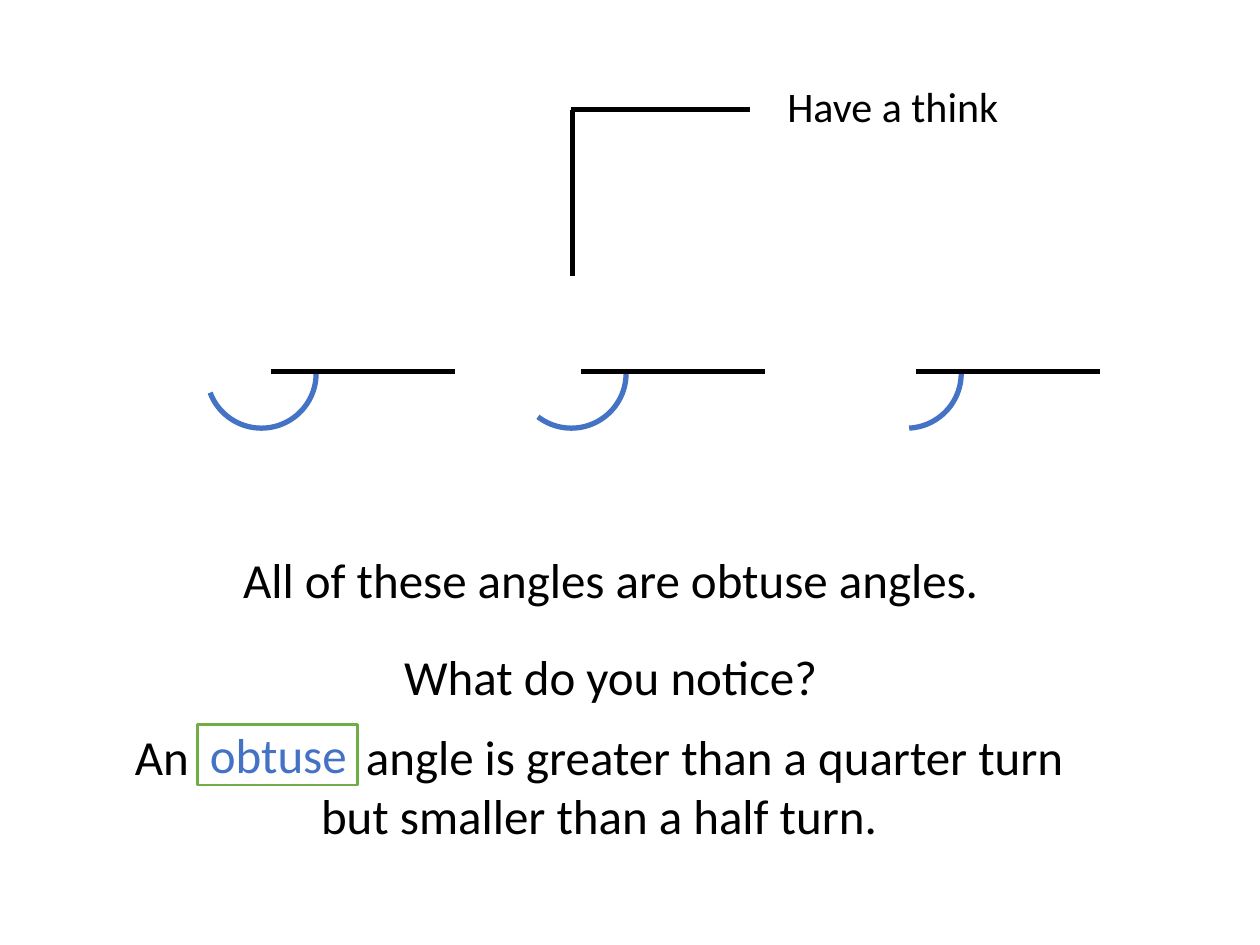
from pptx import Presentation
from pptx.dml.color import RGBColor
from pptx.enum.shapes import MSO_CONNECTOR, MSO_SHAPE
from pptx.enum.text import MSO_AUTO_SIZE, PP_ALIGN
from pptx.oxml.ns import qn
from pptx.util import Pt

COLOURS = {"black": "000000", "blue": "4472C4", "green": "70AD47"}


def add_text(slide, box, runs, size=28, colour="black", alignment=PP_ALIGN.CENTER):
    """Add one wrapped paragraph made of the given runs and return them."""
    shape = slide.shapes.add_textbox(*map(Pt, box))
    text_frame = shape.text_frame
    text_frame.word_wrap = True
    text_frame.auto_size = MSO_AUTO_SIZE.SHAPE_TO_FIT_TEXT
    paragraph = text_frame.paragraphs[0]
    paragraph.alignment = alignment
    for text in runs:
        run = paragraph.add_run()
        run.text = text
        run.font.size = Pt(size)
        run.font.name = "Calibri"
        run.font.color.rgb = RGBColor.from_string(COLOURS[colour])
    return paragraph.runs


def style_line(shape, colour, width):
    """Set the colour and width of an outline."""
    shape.line.color.rgb = RGBColor.from_string(COLOURS[colour])
    shape.line.width = Pt(width)


def add_outline(slide, kind, box, colour, width):
    """Add an unfilled preset shape without a shadow."""
    shape = slide.shapes.add_shape(kind, *map(Pt, box))
    shape.shadow.inherit = False
    shape.fill.background()
    style_line(shape, colour, width)
    return shape


def add_arm(slide, start, end):
    """Add a thick black line for one arm of an angle."""
    arm = slide.shapes.add_connector(MSO_CONNECTOR.STRAIGHT, *map(Pt, start + end))
    style_line(arm, "black", 3)
    properties = arm._element.spPr
    properties.append(properties.makeelement(qn("a:effectLst"), {}))


def add_right_angle(slide, left, top, width, height):
    """Draw the two arms of the quarter turn."""
    add_arm(slide, (left + width, top), (left, top))
    add_arm(slide, (left + 0.8, top + height), (left + 0.8, top))


def add_obtuse_angle(slide, left, top, arc_offset, degrees):
    """Draw a horizontal arm and an arc that turns clockwise from it."""
    size = 62.6
    arc_box = (left + arc_offset, top - 30.3, size, size)
    arc = add_outline(slide, MSO_SHAPE.ARC, arc_box, "blue", 3)
    arc.adjustments[0] = 0
    arc.adjustments[1] = degrees * 0.6
    add_arm(slide, (left, top), (left + 105, top))


def add_conclusion(slide, left, top, width, height):
    """Write the closing sentence with the boxed key word in its gap."""
    sentence = ["An", " ", "angle is greater than a quarter turn but smaller than a half turn."]
    gap = add_text(slide, (left, top, width, height), sentence)[1]
    gap.font._element.set("spc", "9490")
    add_outline(slide, MSO_SHAPE.RECTANGLE, (left + 46.8, top + 2.2, 91.4, 34.6), "green", 1.5)
    add_text(slide, (left + 44.6, top - 1.4, 96.5, 41), ["obtuse"], colour="blue")


def main():
    """Build and save the slide."""
    presentation = Presentation()
    presentation.slide_width, presentation.slide_height = Pt(720), Pt(540)
    slide = presentation.slides.add_slide(presentation.slide_layouts[6])
    angles = [(154.8, -36.7, 159.41), (331.9, -36.7, 127.53), (523.4, -36.7, 87.16)]
    for left, arc_offset, degrees in angles:
        add_obtuse_angle(slide, left, 212.4, arc_offset, degrees)
    add_right_angle(slide, 326.2, 62.6, 102.2, 95)
    add_text(slide, (442.8, 42.5, 165, 36), ["Have a think"], 24, alignment=PP_ALIGN.LEFT)
    for top, text in [(310.3, "All of these angles are obtuse angles."),
                      (365.8, "What do you notice?")]:
        add_text(slide, (52.6, top, 592.6, 41), [text])
    add_conclusion(slide, 66.2, 411.8, 552.2, 75)
    presentation.save("out.pptx")


if __name__ == "__main__":
    main()
